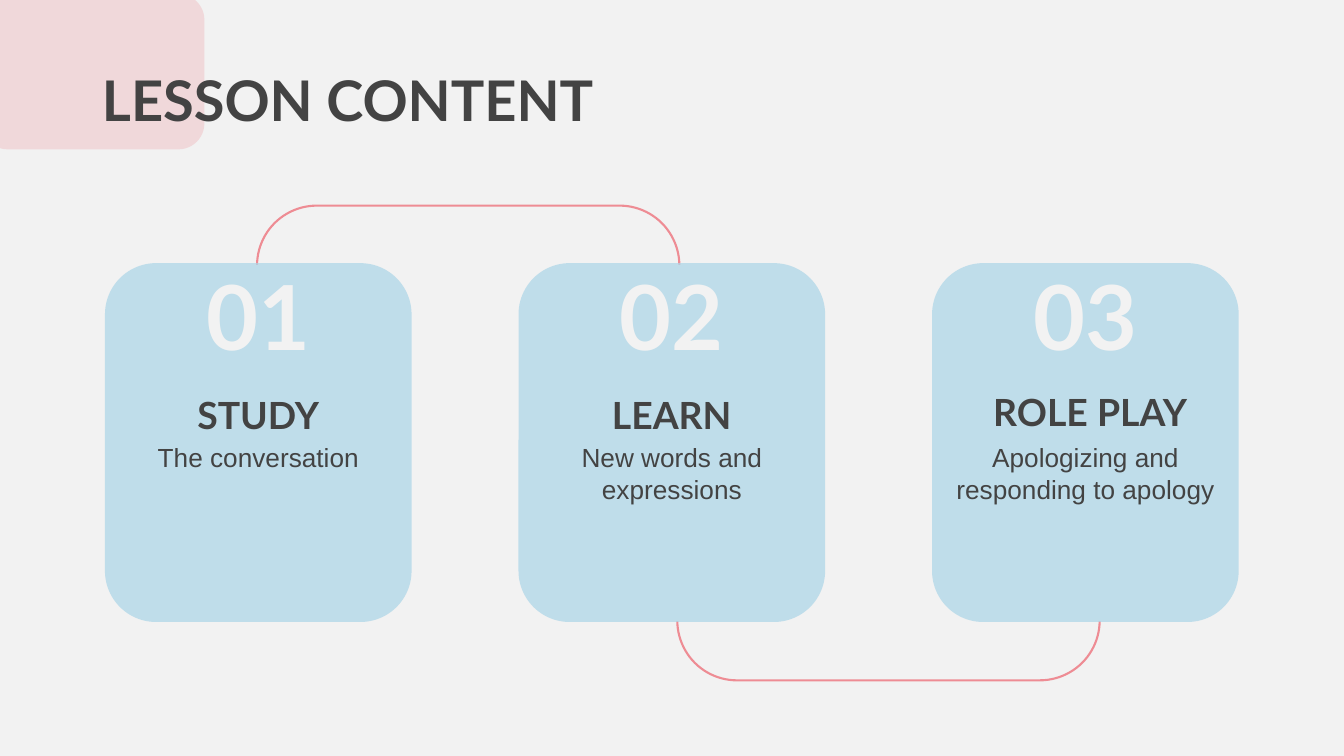
"""Build the lesson content slide with three linked cards."""
from dataclasses import dataclass
from typing import Optional

from lxml.etree import SubElement
from pptx import Presentation
from pptx.dml.color import RGBColor
from pptx.enum.shapes import MSO_SHAPE
from pptx.enum.text import MSO_ANCHOR, PP_ALIGN
from pptx.oxml.ns import qn
from pptx.util import Pt

PAPER = RGBColor(0xF2, 0xF2, 0xF2)
PINK = RGBColor(0xEE, 0x8C, 0x94)
BLUE = RGBColor(0xAE, 0xD7, 0xE8)
INK = RGBColor(0x43, 0x43, 0x43)

CARD_LEFT, CARD_TOP, CARD_W, CARD_H, CARD_PITCH = 75, 188, 219, 256.3, 295.4
LINK_W = 301.7
MASK_W, MASK_H = 356.4, 233.3
INSET = 9.4

HEADING = {"name": "Lato", "size": Pt(40), "bold": True}
NUMBER = {"name": "Lato", "size": Pt(64), "bold": True}
LABEL = {"name": "Lato", "size": Pt(26.7), "bold": True}
BODY = {"name": "Arial", "size": Pt(18.7), "bold": False}


@dataclass
class Box:
    """Position and size in points."""
    x: float
    y: float
    w: float
    h: float


@dataclass
class Link:
    """A rounded outline with the mask that hides most of it."""
    outline: Box
    mask: Box


@dataclass
class Card:
    """Texts of one card, with its label and body placement."""
    number: str
    label: str
    body: str
    label_w: float
    body_w: float
    label_dx: float = 0
    label_y: float = 261.4


LINKS = [
    Link(Box(483.8, 229.7, LINK_W, CARD_H), Box(452.2, 210.2, MASK_W, MASK_H)),
    Link(Box(183.6, 146.9, LINK_W, CARD_H), Box(160.6, 189.4, MASK_W, MASK_H)),
]
CARDS = [
    Card("01", "STUDY", "The conversation", 164, 185),
    Card("02", "LEARN", "New words and expressions", 191, 191),
    Card("03", "ROLE PLAY", "Apologizing and responding to apology",
         183, 206, 3.5, 259.2),
]


def add_panel(slide, box: Box, kind=MSO_SHAPE.ROUNDED_RECTANGLE,
              fill: Optional[RGBColor] = None, alpha: int = 100,
              line: Optional[RGBColor] = None) -> None:
    """Draw a preset shape, filled or outlined."""
    sp = slide.shapes.add_shape(kind, Pt(box.x), Pt(box.y), Pt(box.w), Pt(box.h))
    sp.shadow.inherit = False
    if fill is None:
        sp.fill.background()
    else:
        sp.fill.solid()
        sp.fill.fore_color.rgb = fill
        if alpha < 100:
            clr = sp._element.spPr.find(qn("a:solidFill"))[0]
            SubElement(clr, qn("a:alpha")).set("val", str(alpha * 1000))
    if line is None:
        sp.line.fill.background()
    else:
        sp.line.color.rgb = line
        sp.line.width = Pt(1.5)


def add_text(slide, box: Box, text: str, font: dict, color: RGBColor = INK,
             align=PP_ALIGN.CENTER, anchor=MSO_ANCHOR.TOP) -> None:
    """Draw a wrapped text box with one run."""
    sp = slide.shapes.add_textbox(Pt(box.x), Pt(box.y), Pt(box.w), Pt(box.h))
    tf = sp.text_frame
    frame = {"word_wrap": True, "vertical_anchor": anchor}
    for side in ("left", "right", "top", "bottom"):
        frame[f"margin_{side}"] = Pt(INSET)
    for name, value in frame.items():
        setattr(tf, name, value)
    p = tf.paragraphs[0]
    p.alignment = align
    r = p.add_run()
    r.text = text
    for name, value in font.items():
        setattr(r.font, name, value)
    r.font.color.rgb = color


def add_card_text(slide, card: Card, mid: float) -> None:
    """Write the number, label and body of a card around its middle."""
    label_x = mid + card.label_dx - card.label_w / 2
    add_text(slide, Box(mid - 82, 212.4, 164, 60.5), card.number, NUMBER,
             PAPER, anchor=MSO_ANCHOR.BOTTOM)
    add_text(slide, Box(label_x, card.label_y, card.label_w, 60.5),
             card.label, LABEL, anchor=MSO_ANCHOR.BOTTOM)
    add_text(slide, Box(mid - card.body_w / 2, 306, card.body_w, 92),
             card.body, BODY)


def main() -> None:
    """Build and save the slide."""
    prs = Presentation()
    prs.slide_width, prs.slide_height = Pt(960), Pt(540)
    s = prs.slides.add_slide(prs.slide_layouts[6])
    s.background.fill.solid()
    s.background.fill.fore_color.rgb = PAPER
    add_panel(s, Box(-13, -4.3, 159, 111), fill=PINK, alpha=25)
    add_text(s, Box(63.4, 37.4, 442, 79.2), "LESSON CONTENT", HEADING,
             align=PP_ALIGN.LEFT)
    for link in LINKS:
        add_panel(s, link.outline, line=PINK)
        add_panel(s, link.mask, MSO_SHAPE.RECTANGLE, fill=PAPER)
    for i, card in enumerate(CARDS):
        x = CARD_LEFT + i * CARD_PITCH
        add_panel(s, Box(x, CARD_TOP, CARD_W, CARD_H), fill=BLUE, alpha=74)
        add_card_text(s, card, x + CARD_W / 2)
    prs.save("out.pptx")


if __name__ == "__main__":
    main()
